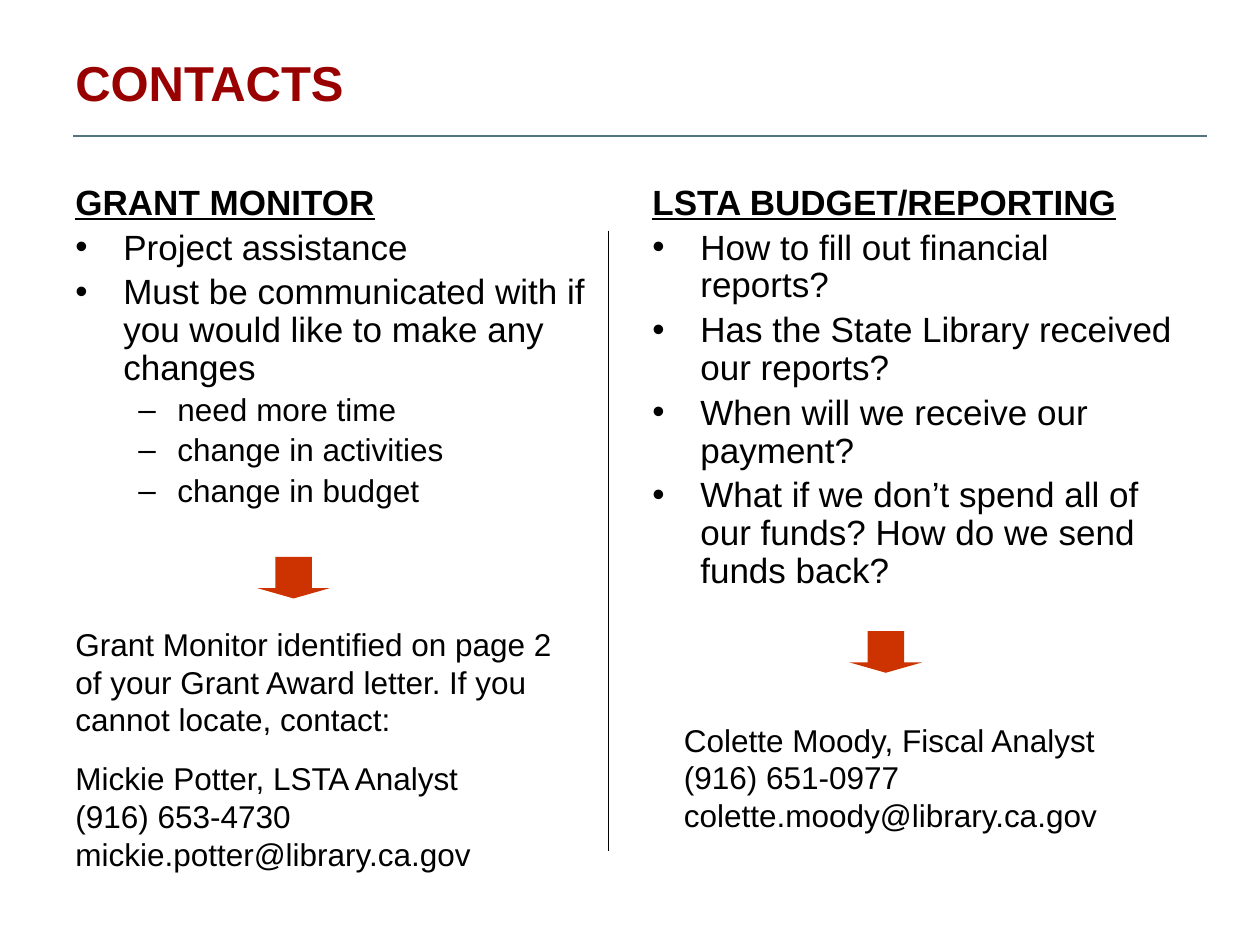
from dataclasses import dataclass

from lxml.etree import SubElement
from pptx import Presentation
from pptx.dml.color import RGBColor
from pptx.enum.shapes import MSO_CONNECTOR as Connector, MSO_SHAPE as Shape
from pptx.enum.text import MSO_ANCHOR as Anchor
from pptx.oxml.ns import qn
from pptx.util import Inches, Pt


@dataclass(frozen=True)
class Theme:
    font: str = "Arial"
    title: RGBColor = RGBColor(0x99, 0x00, 0x00)
    text: RGBColor = RGBColor(0x00, 0x00, 0x00)
    rule: RGBColor = RGBColor(0x53, 0x76, 0x7D)
    arrow: RGBColor = RGBColor(0xCC, 0x33, 0x00)
    title_size: int = 28
    body_size: int = 20
    small_size: int = 18


@dataclass(frozen=True)
class Box:
    left: float
    top: float
    width: float
    height: float

    def emu(self):
        return [Inches(v) for v in (self.left, self.top, self.width, self.height)]


@dataclass(frozen=True)
class Level:
    bullet: str
    margin: float
    hanging: float
    size: int


@dataclass(frozen=True)
class Column:
    heading: str
    items: list[tuple[Level, str]]
    body: Box
    arrow: Box
    contact: list[str]
    contact_box: Box
    intro: bool = False


THEME = Theme()
HEADING = Level("", 0.38, 0.38, THEME.body_size)
POINT = Level("•", 0.38, 0.38, THEME.body_size)
DETAIL = Level("–", 0.81, 0.31, THEME.small_size)

COLUMNS = [
    Column(
        "GRANT MONITOR",
        [(POINT, "Project assistance"),
         (POINT, "Must be communicated with if you would like to make any changes"),
         (DETAIL, "need more time"),
         (DETAIL, "change in activities"),
         (DETAIL, "change in budget")],
        Box(0.5, 1.42, 4.42, 3),
        Box(2.04, 4.42, 0.58, 0.33),
        ["Grant Monitor identified on page 2 of your Grant Award letter. "
         "If you cannot locate, contact:",
         "Mickie Potter, LSTA Analyst", "(916) 653-4730",
         "mickie.potter@library.ca.gov"],
        Box(0.5, 4.91, 4.08, 2.09),
        intro=True,
    ),
    Column(
        "LSTA BUDGET/REPORTING",
        [(POINT, "How to fill out financial reports?"),
         (POINT, "Has the State Library received our reports?"),
         (POINT, "When will we receive our payment?"),
         (POINT, "What if we don’t spend all of our funds? How do we send funds back?")],
        Box(5.08, 1.42, 4.42, 3.46),
        Box(6.74, 5.01, 0.58, 0.33),
        ["Colette Moody, Fiscal Analyst", "(916) 651-0977",
         "colette.moody@library.ca.gov"],
        Box(5.33, 5.67, 4.17, 1),
    ),
]


def add_text(s, box: Box, lines: list[str], size: int, color: RGBColor):
    tf = s.shapes.add_textbox(*box.emu()).text_frame
    tf.word_wrap = True
    tf.text = "\n".join(lines)
    for p in tf.paragraphs:
        for r in p.runs:
            r.font.name, r.font.size = THEME.font, Pt(size)
            r.font.color.rgb = color
    return tf


def apply_level(p, level: Level) -> None:
    """Set the size, spacing, hanging indent and bullet of a paragraph."""
    p.line_spacing = 0.9
    p.space_before = Pt(0.2 * level.size)
    p.runs[0].font.size = Pt(level.size)
    pPr = p._p.get_or_add_pPr()
    pPr.set("marL", str(Inches(level.margin)))
    pPr.set("indent", str(-Inches(level.hanging)))
    if level.bullet:
        SubElement(pPr, qn("a:buFont"), typeface=THEME.font)
        SubElement(pPr, qn("a:buChar"), char=level.bullet)
    else:
        SubElement(pPr, qn("a:buNone"))


def add_line(s, start: tuple[float, float], end: tuple[float, float],
             color: RGBColor, width: float) -> None:
    line = s.shapes.add_connector(
        Connector.STRAIGHT, *[Inches(v) for v in (*start, *end)])
    line.line.color.rgb = color
    line.line.width = Pt(width)
    SubElement(line._element.spPr, qn("a:effectLst"))


def add_arrow(s, box: Box) -> None:
    sp = s.shapes.add_shape(Shape.DOWN_ARROW, *box.emu())
    sp.adjustments[0], sp.adjustments[1] = 0.5, 0.25
    sp.fill.solid()
    sp.fill.fore_color.rgb = THEME.arrow
    sp.line.fill.background()
    sp.shadow.inherit = False


def add_column(s, column: Column) -> None:
    entries = [(HEADING, column.heading), *column.items]
    tf = add_text(s, column.body, [text for _, text in entries],
                  THEME.body_size, THEME.text)
    for p, (level, _) in zip(tf.paragraphs, entries):
        apply_level(p, level)
    heading = tf.paragraphs[0].runs[0].font
    heading.bold = heading.underline = True

    add_arrow(s, column.arrow)
    tf = add_text(s, column.contact_box, column.contact,
                  THEME.small_size, THEME.text)
    if column.intro:
        tf.paragraphs[0].space_after = Pt(12)


def main() -> None:
    prs = Presentation()
    prs.slide_width, prs.slide_height = Inches(10), Inches(7.5)
    s = prs.slides.add_slide(prs.slide_layouts[6])

    tf = add_text(s, Box(0.5, 0.3, 9, 0.7), ["CONTACTS"],
                  THEME.title_size, THEME.title)
    tf.vertical_anchor = Anchor.MIDDLE
    tf.paragraphs[0].runs[0].font.bold = True
    add_line(s, (0.58, 1.08), (9.58, 1.08), THEME.rule, 1.5)

    for column in COLUMNS:
        add_column(s, column)
    add_line(s, (4.83, 1.83), (4.83, 6.75), THEME.text, 0.75)
    prs.save("out.pptx")


if __name__ == "__main__":
    main()
